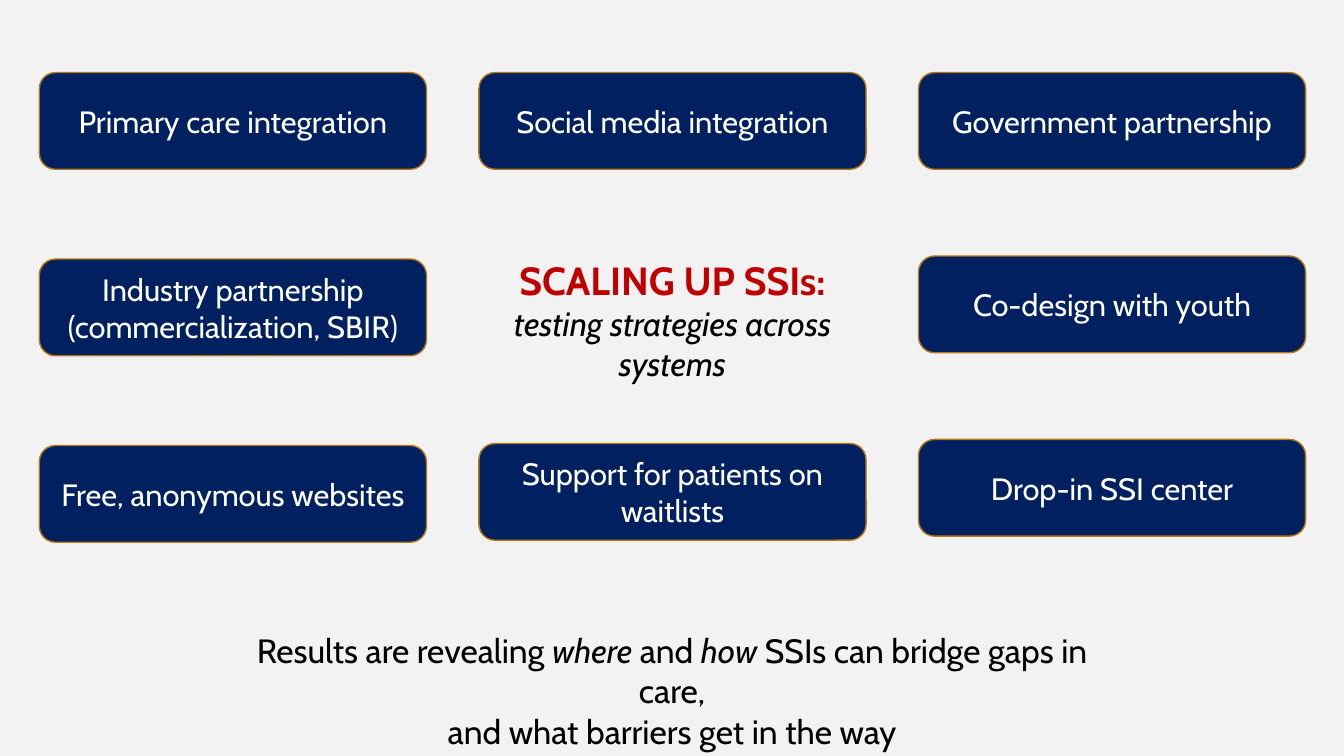
from dataclasses import dataclass

from pptx import Presentation
from pptx.dml.color import RGBColor
from pptx.enum.shapes import MSO_SHAPE
from pptx.enum.text import MSO_ANCHOR, MSO_AUTO_SIZE, PP_ALIGN
from pptx.util import Inches, Pt


@dataclass(frozen=True)
class Theme:
    font: str = "Cabin"
    background: str = "F2F2F2"
    navy: str = "002060"
    gold: str = "B67815"
    red: str = "C00000"
    black: str = "000000"
    white: str = "FFFFFF"
    heading_size: int = 28
    body_size: int = 24
    card_size: int = 22
    outline: int = 1


THEME = Theme()
CARD_SIZE = (3.84, 0.96)
COLUMN_PITCH = 4.36

STRATEGY_COLUMNS = [
    (1.85, ["Primary care integration",
            "Industry partnership (commercialization, SBIR)",
            "Free, anonymous websites"]),
    (1.84, ["Social media integration",
            None,
            "Support for patients on waitlists"]),
    (1.82, ["Government partnership",
            "Co-design with youth",
            "Drop-in SSI center"]),
]


def add_run(paragraph, text, size, color, bold=False, italic=False):
    paragraph.alignment = PP_ALIGN.CENTER
    run = paragraph.add_run()
    run.text = text
    run.font.name = THEME.font
    run.font.size = Pt(size)
    run.font.bold = bold
    run.font.italic = italic
    run.font.color.rgb = RGBColor.from_string(color)


def add_text_frame(slide, left, top, width, height):
    box = slide.shapes.add_textbox(
        Inches(left), Inches(top), Inches(width), Inches(height))
    frame = box.text_frame
    frame.word_wrap = True
    frame.auto_size = MSO_AUTO_SIZE.SHAPE_TO_FIT_TEXT
    return frame


def add_strategy_card(slide, left, top, label):
    width, height = CARD_SIZE
    card = slide.shapes.add_shape(
        MSO_SHAPE.ROUNDED_RECTANGLE,
        Inches(left), Inches(top), Inches(width), Inches(height))
    card.shadow.inherit = False
    card.fill.solid()
    card.fill.fore_color.rgb = RGBColor.from_string(THEME.navy)
    card.line.color.rgb = RGBColor.from_string(THEME.gold)
    card.line.width = Pt(THEME.outline)
    frame = card.text_frame
    frame.word_wrap = True
    frame.vertical_anchor = MSO_ANCHOR.MIDDLE
    add_run(frame.paragraphs[0], label, THEME.card_size, THEME.white)


def add_strategy_grid(slide, left, top):
    for column, (row_pitch, labels) in enumerate(STRATEGY_COLUMNS):
        for row, label in enumerate(labels):
            if label:
                add_strategy_card(slide, left + column * COLUMN_PITCH,
                                  top + row * row_pitch, label)


def add_central_theme(slide, left, top, width, height):
    frame = add_text_frame(slide, left, top, width, height)
    add_run(frame.paragraphs[0], "SCALING UP SSIs:",
            THEME.heading_size, THEME.red, bold=True)
    add_run(frame.add_paragraph(), "testing strategies across systems",
            THEME.body_size, THEME.black, italic=True)


def add_conclusion(slide, left, top, width, height):
    frame = add_text_frame(slide, left, top, width, height)
    findings = [("Results are revealing ", False), ("where ", True),
                ("and ", False), ("how ", True),
                ("SSIs can bridge gaps in care,", False)]
    for text, italic in findings:
        add_run(frame.paragraphs[0], text, THEME.body_size, THEME.black,
                italic=italic)
    add_run(frame.add_paragraph(), "and what barriers get in the way",
            THEME.body_size, THEME.black)


def main():
    deck = Presentation()
    deck.slide_width = Inches(13.33)
    deck.slide_height = Inches(7.5)
    slide = deck.slides.add_slide(deck.slide_layouts[6])
    slide.background.fill.solid()
    slide.background.fill.fore_color.rgb = RGBColor.from_string(
        THEME.background)
    add_central_theme(slide, 4.55, 2.49, 4.24, 0.98)
    add_strategy_grid(slide, 0.39, 0.72)
    add_conclusion(slide, 2.09, 6.2, 9.15, 0.91)
    deck.save("out.pptx")


if __name__ == "__main__":
    main()
